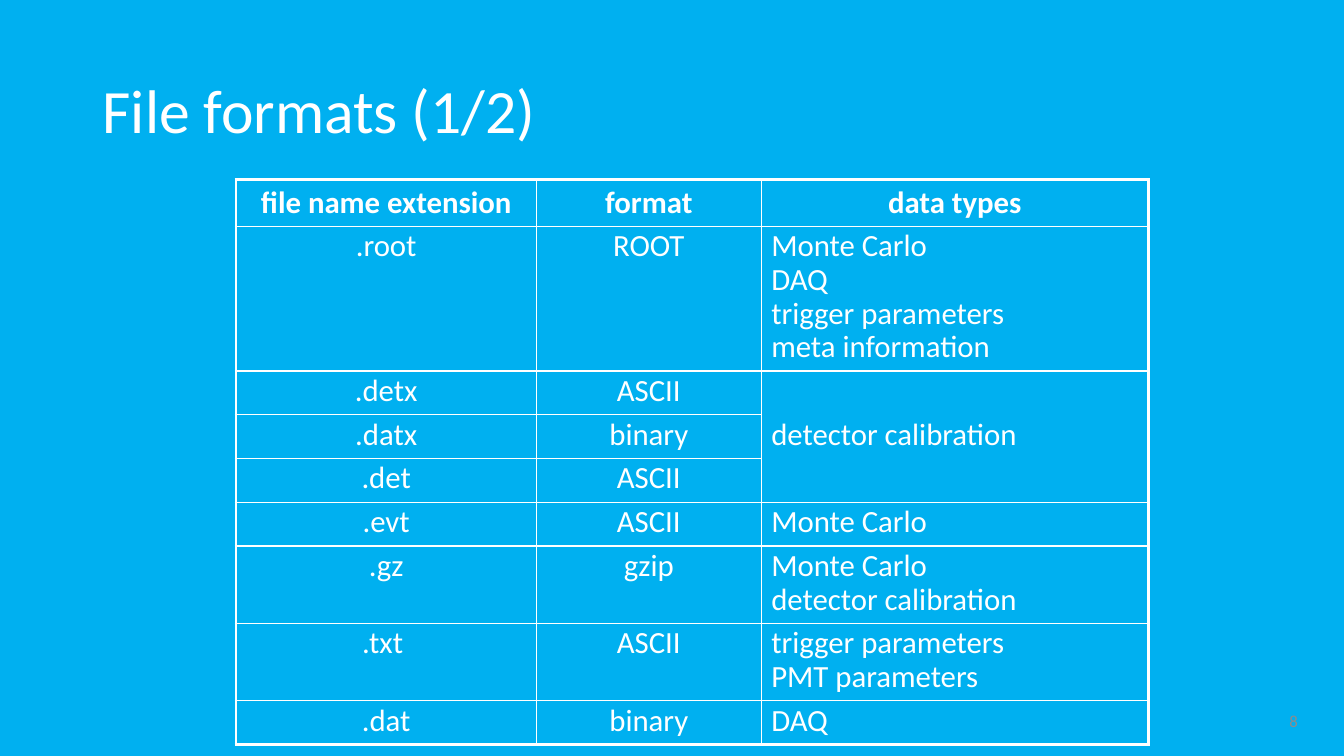
from lxml.etree import SubElement
from pptx import Presentation
from pptx.dml.color import RGBColor as RGB
from pptx.enum.text import MSO_ANCHOR as Anchor, PP_ALIGN as Align
from pptx.oxml.ns import qn
from pptx.util import Inches, Pt

HUES = {"sky": "00B0F0", "white": "FFFFFF", "gray": "8C8C8C"}


def write(frame, text, size=22, hue="white", bold=False, align=Align.LEFT,
          gap=None, anchor=Anchor.TOP):
    frame.word_wrap = True
    frame.vertical_anchor = anchor
    frame.text = text
    for para in frame.paragraphs:
        para.alignment = align
        para.line_spacing = gap
        for run in para.runs:
            font = run.font
            font.name, font.size, font.bold = "Calibri", Pt(size), bold
            font.color.rgb = RGB.from_string(HUES[hue])


def edge(cell, widths):
    props = cell._tc.get_or_add_tcPr()
    for spot, (side, width) in enumerate(widths.items()):
        line = SubElement(props, qn("a:ln" + side), w=str(Pt(width)))
        fill = SubElement(line, qn("a:solidFill"))
        SubElement(fill, qn("a:srgbClr"), val=HUES["white"])
        props.insert(spot, line)


deck = Presentation()
deck.slide_width, deck.slide_height = Inches(13.33), Inches(7.5)
slide = deck.slides.add_slide(deck.slide_layouts[6])
back = slide.background.fill
back.solid()
back.fore_color.rgb = RGB.from_string(HUES["sky"])

title = slide.shapes.add_textbox(Inches(0.92), Inches(0.4), Inches(11.5), Inches(1.45))
write(title.text_frame, "File formats (1/2)", size=44, gap=0.9, anchor=Anchor.MIDDLE)

rows = [
    ("file name extension", "format", "data types"),
    (".root", "ROOT", "Monte Carlo\nDAQ\ntrigger parameters\nmeta information"),
    (".detx", "ASCII", "detector calibration"),
    (".datx", "binary", ""),
    (".det", "ASCII", ""),
    (".evt", "ASCII", "Monte Carlo"),
    (".gz", "gzip", "Monte Carlo\vdetector calibration"),
    (".txt ", "ASCII", "trigger parameters\nPMT parameters"),
    (".dat", "binary", "DAQ"),
]
cols = [2.98, 2.23, 3.84]
last, end = len(rows) - 1, len(cols) - 1
table = slide.shapes.add_table(len(rows), len(cols), Inches(2.34), Inches(1.78),
                               Inches(sum(cols)), Inches(0.41 * len(rows))).table
table.horz_banding = False
for col, width in zip(table.columns, cols):
    col.width = Inches(width)
table.cell(2, 2).merge(table.cell(4, 2))

for r, row in enumerate(rows):
    table.rows[r].height = Inches(0.41)
    for c, text in enumerate(row):
        cell = table.cell(r, c)
        cell.fill.background()
        if cell.is_spanned:
            continue
        head = r == 0
        write(cell.text_frame, text, bold=head, gap=None if head else Pt(24),
              align=Align.CENTER if head or c < end else Align.LEFT)
        cell.vertical_anchor = Anchor.MIDDLE if cell.is_merge_origin else Anchor.TOP
        outer = {"L": c == 0, "R": c == end, "T": head, "B": r == last}
        edge(cell, {side: 2.25 if rim else 1 for side, rim in outer.items()})

page = slide.shapes.add_textbox(Inches(9.97), Inches(6.95), Inches(3), Inches(0.4))
write(page.text_frame, "8", size=12, hue="gray", align=Align.RIGHT, anchor=Anchor.MIDDLE)

deck.save("out.pptx")
